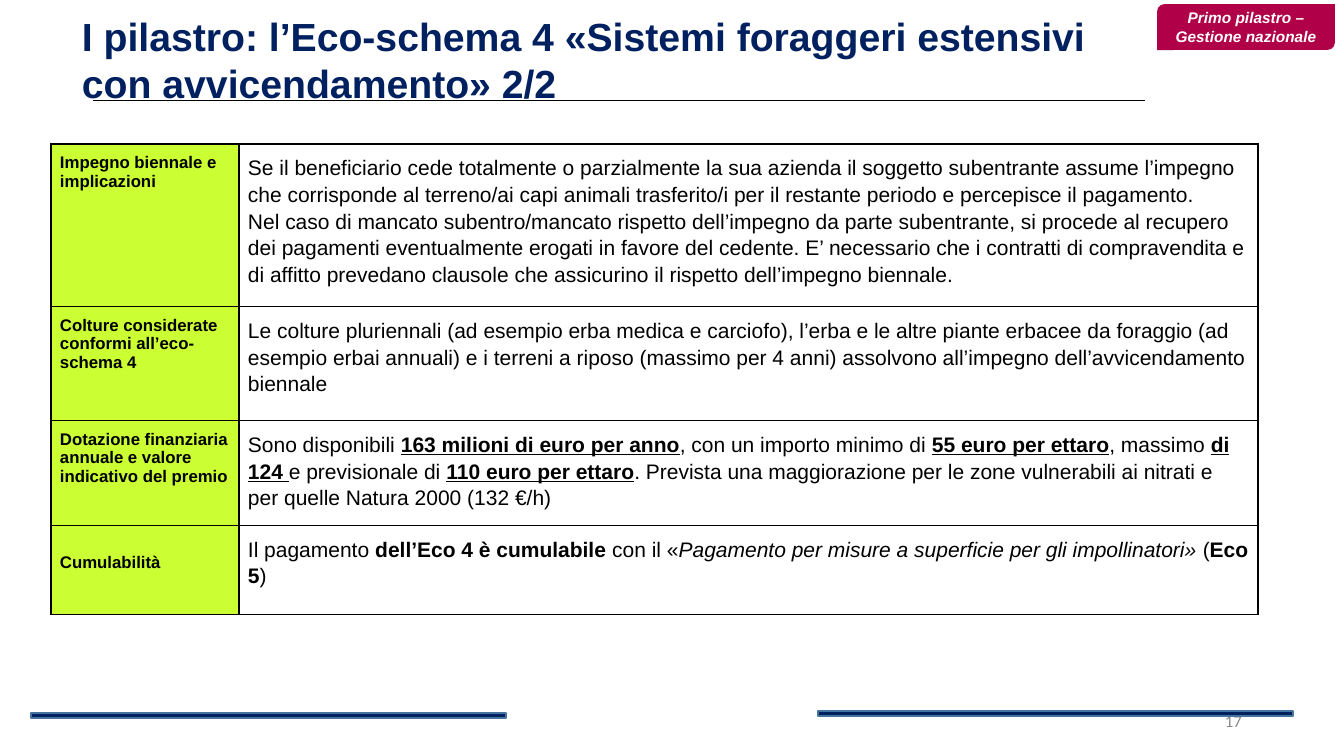
"""Build the Eco-schema 4 slide: title, badge, commitments table and footer."""
from pptx import Presentation
from pptx import util as u
from pptx.dml.color import RGBColor
from pptx.enum import shapes, text
from pptx.oxml import parse_xml
from pptx.oxml.ns import nsdecls, qn

PX = 914400 / 100.8
NAVY = RGBColor(0x00, 0x20, 0x60)
BLUE = RGBColor(0x43, 0x73, 0x9E)
LIME = RGBColor(0xCC, 0xFF, 0x33)
CRIMSON = RGBColor(0xB0, 0x00, 0x47)
GRAY = RGBColor(0x89, 0x89, 0x89)
BLACK = RGBColor(0, 0, 0)
WHITE = RGBColor(0xFF, 0xFF, 0xFF)


def px(*lengths):
    return [u.Emu(round(n * PX)) for n in lengths]


def write(tf, paragraphs, size, color=BLACK, font="Arial", style="", align=None,
          spacing=None, anchor=None, margins=(9, 9, 9, 9)):
    tf.word_wrap = True
    tf.margin_left, tf.margin_top, tf.margin_right, tf.margin_bottom = px(*margins)
    if anchor is not None:
        tf.vertical_anchor = anchor
    for i, runs in enumerate(paragraphs):
        p = tf.add_paragraph() if i else tf.paragraphs[0]
        p.alignment, p.line_spacing = align, spacing
        for words, marks in [(runs, style)] if isinstance(runs, str) else runs:
            r = p.add_run()
            r.text = words
            r.font.name, r.font.size = font, u.Pt(size)
            r.font.color.rgb = color
            r.font.bold, r.font.italic = "b" in marks, "i" in marks
            r.font.underline = "u" in marks


prs = Presentation()
prs.slide_width, prs.slide_height = px(1344, 756)
s = prs.slides.add_slide(prs.slide_layouts[6])

number = s.shapes.add_textbox(*px(950, 701, 302, 40))
write(number.text_frame, ["17"], 12, GRAY, "Calibri", align=text.PP_ALIGN.RIGHT,
      anchor=text.MSO_ANCHOR.MIDDLE, margins=(10, 5, 10, 5))

for left, top in [(818, 711), (31, 713)]:
    bar = s.shapes.add_shape(shapes.MSO_SHAPE.RECTANGLE, *px(left, top, 475, 5))
    bar.shadow.inherit = False
    bar.fill.solid()
    bar.fill.fore_color.rgb = NAVY
    bar.line.color.rgb = BLUE
    bar.line.width = u.Pt(1)

rule = s.shapes.add_connector(shapes.MSO_CONNECTOR.STRAIGHT, *px(93, 100, 1145, 100))
rule.line.color.rgb = BLACK
rule.line.width = u.Pt(0.5)
rule._element.spPr.append(parse_xml(f"<a:effectLst {nsdecls('a')}/>"))

rows = [
    (153, "Impegno biennale e implicazioni", [
        "Se il beneficiario cede totalmente o parzialmente la sua azienda il soggetto "
        "subentrante assume l’impegno che corrisponde al terreno/ai capi animali "
        "trasferito/i per il restante periodo e percepisce il pagamento.",
        "Nel caso di mancato subentro/mancato rispetto dell’impegno da parte subentrante, "
        "si procede al recupero dei pagamenti eventualmente erogati in favore del cedente. "
        "E’ necessario che i contratti di compravendita e di affitto prevedano clausole "
        "che assicurino il rispetto dell’impegno biennale."]),
    (114, "Colture considerate conformi all’eco-schema 4", [
        "Le colture pluriennali (ad esempio erba medica e carciofo), l’erba e le altre "
        "piante erbacee da foraggio (ad esempio erbai annuali) e i terreni a riposo "
        "(massimo per 4 anni) assolvono all’impegno dell’avvicendamento biennale"]),
    (99, "Dotazione finanziaria annuale e valore indicativo del premio", [[
        ("Sono disponibili ", ""), ("163 milioni di euro per anno", "bu"),
        (", con un importo minimo di ", ""), ("55 euro per ettaro", "bu"),
        (", massimo ", ""), ("di 124 ", "bu"), ("e previsionale di ", ""),
        ("110 euro per ettaro", "bu"),
        (". Prevista una maggiorazione per le zone vulnerabili ai nitrati e per quelle "
         "Natura 2000 (132 €/h)", "")]]),
    (89, "Cumulabilità", [[
        ("Il pagamento ", ""), ("dell’Eco 4 è cumulabile ", "b"), ("con il «", ""),
        ("Pagamento per misure a superficie per gli impollinatori» ", "i"),
        ("(", ""), ("Eco 5", "b"), (")", "")]]),
]
height = sum(row[0] for row in rows)
frame = s.shapes.add_table(len(rows), 2, *px(51, 144, 1207, height))
table = frame.table
table.first_row = table.horz_banding = False
table.columns[0].width, table.columns[1].width = px(188, 1019)
for i, (row_height, label, body) in enumerate(rows):
    table.rows[i].height, = px(row_height)
    head, cell = table.cell(i, 0), table.cell(i, 1)
    head_top = 28 if label == "Cumulabilità" else 9
    write(head.text_frame, [label], 12, style="b")
    head.margin_left, head.margin_top, head.margin_right, head.margin_bottom = px(9, head_top, 9, 9)
    write(cell.text_frame, body, 15, spacing=1.15)
    cell.margin_left, cell.margin_top, cell.margin_right, cell.margin_bottom = px(9, 9, 9, 9)
    for c, color in [(head, LIME), (cell, WHITE)]:
        c.fill.solid()
        c.fill.fore_color.rgb = color
        tcPr = c._tc.get_or_add_tcPr()
        for j, side in enumerate("LRTB"):
            tcPr.insert(j, parse_xml(
                f'<a:ln{side} {nsdecls("a")} w="12700"><a:solidFill>'
                f'<a:srgbClr val="{BLACK}"/></a:solidFill></a:ln{side}>'))
        for bodyPr in c._tc.iter(qn("a:bodyPr")):
            bodyPr.attrib.clear()

badge = s.shapes.add_shape(shapes.MSO_SHAPE.ROUND_2_DIAG_RECTANGLE, *px(1157, 4, 178, 46))
badge.shadow.inherit = False
badge.fill.solid()
badge.fill.fore_color.rgb = CRIMSON
badge.line.fill.background()
write(badge.text_frame, ["Primo pilastro – Gestione nazionale"], 11, WHITE, style="bi",
      align=text.PP_ALIGN.CENTER, anchor=text.MSO_ANCHOR.MIDDLE, margins=(10, 5, 10, 5))

title = s.shapes.add_textbox(*px(72, 2, 1037, 115))
write(title.text_frame,
      ["I pilastro: l’Eco-schema 4 «Sistemi foraggeri estensivi con avvicendamento» 2/2"],
      28, NAVY, style="b", margins=(10, 10, 10, 10))

prs.save("out.pptx")
